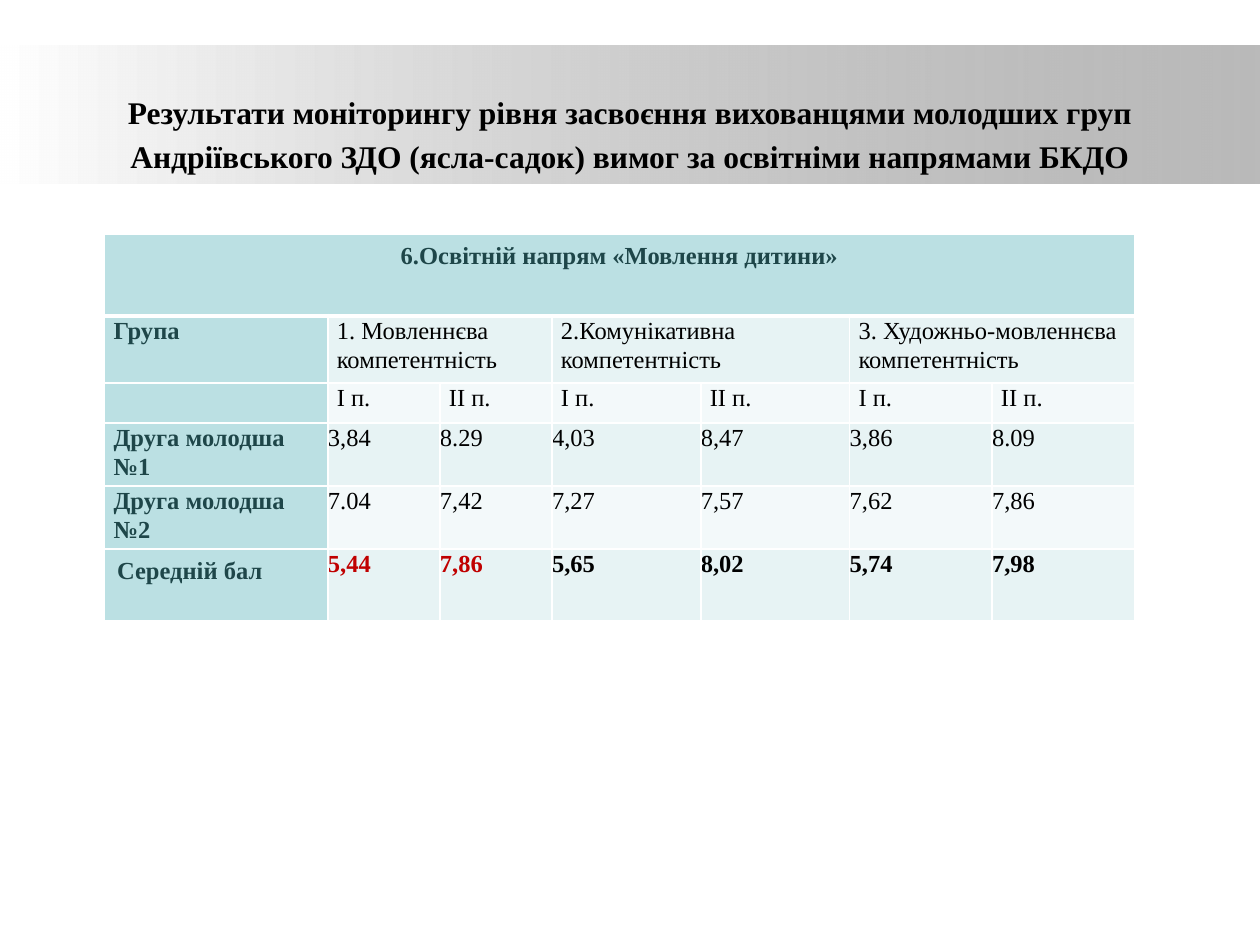
from dataclasses import dataclass

from lxml.etree import SubElement
from pptx import Presentation
from pptx.dml.color import RGBColor
from pptx.enum.shapes import MSO_SHAPE
from pptx.enum.text import MSO_ANCHOR, PP_ALIGN
from pptx.oxml.ns import qn
from pptx.util import Cm, Pt


@dataclass(frozen=True)
class Theme:
    font: str = "Times New Roman"
    title_size: int = 18
    body_size: int = 14
    white: str = "FFFFFF"
    grey: str = "808080"
    black: str = "000000"
    teal: str = "1E4649"
    red: str = "C00000"
    header: str = "BBE0E3"
    odd_row: str = "E7F3F4"
    even_row: str = "F3F9FA"


theme = Theme()


def write(tf, text, size=theme.body_size, color=theme.black, bold=False,
          align=PP_ALIGN.LEFT, spacing=1.07):
    p = tf.paragraphs[0]
    p.alignment = align
    p.line_spacing = spacing
    for i, line in enumerate(text.split("\n")):
        if i:
            p.add_line_break()
        r = p.add_run()
        r.text = line
        r.font.name = theme.font
        r.font.size = Pt(size)
        r.font.bold = bold
        r.font.color.rgb = RGBColor.from_string(color)


def style_cell(cell, fill, top=1, bottom=1):
    """Draw white borders, with widths in points, and fill the cell."""
    tc_pr = cell._tc.get_or_add_tcPr()
    for side, width in (("L", 1), ("R", 1), ("T", top), ("B", bottom)):
        ln = SubElement(tc_pr, qn(f"a:ln{side}"), w=str(Pt(width)))
        SubElement(SubElement(ln, qn("a:solidFill")), qn("a:srgbClr"), val=theme.white)
    cell.fill.solid()
    cell.fill.fore_color.rgb = RGBColor.from_string(fill)


prs = Presentation()
prs.slide_width, prs.slide_height = Cm(25.4), Cm(19.05)
s = prs.slides.add_slide(prs.slide_layouts[6])

# Title band, fading from white to translucent grey
band = s.shapes.add_shape(MSO_SHAPE.RECTANGLE, 0, Cm(0.91), prs.slide_width, Cm(2.8))
band.shadow.inherit = False
band.line.fill.background()
band.fill.gradient()
band.fill.gradient_angle = 0
for stop, position, color in zip(band.fill.gradient_stops, (0, 1), (theme.white, theme.grey)):
    stop.position = position
    stop.color.rgb = RGBColor.from_string(color)
grey_stop = band.element.findall(".//" + qn("a:gs"))[-1]
SubElement(grey_stop[0], qn("a:alpha"), val="54000")

title = s.shapes.add_textbox(Cm(1.27), Cm(0.76), Cm(22.86), Cm(3.76))
title.text_frame.word_wrap = True
title.text_frame.vertical_anchor = MSO_ANCHOR.MIDDLE
write(title.text_frame,
      "Результати моніторингу рівня засвоєння вихованцями молодших груп\n"
      "Андріївського ЗДО (ясла-садок) вимог за освітніми напрямами БКДО",
      size=theme.title_size, bold=True, align=PP_ALIGN.CENTER, spacing=1.17)

# Monitoring results
column_widths = [4.5, 2.26, 2.26, 3, 3, 2.87, 2.87]
row_heights = [1.65, 1.35, 0.81, 1.27, 1.27, 1.45]
rows = [
    ["6.Освітній напрям «Мовлення дитини»"] + [""] * 6,
    ["Група", "1. Мовленнєва компетентність", "", "2.Комунікативна компетентність", "",
     "3. Художньо-мовленнєва компетентність", ""],
    [""] + ["І п.", "ІІ п."] * 3,
    ["Друга молодша №1", "3,84", "8.29", "4,03", "8,47", "3,86", "8.09"],
    ["Друга молодша №2", "7.04", "7,42", "7,27", "7,57", "7,62", "7,86"],
    ["Середній бал", "5,44", "7,86", "5,65", "8,02", "5,74", "7,98"],
]
average_row = len(rows) - 1
first_score_row = 3

table = s.shapes.add_table(len(rows), len(column_widths), Cm(2.11), Cm(4.72),
                           Cm(sum(column_widths)), Cm(sum(row_heights))).table
table.first_row = table.horz_banding = False
for column, width in zip(table.columns, column_widths):
    column.width = Cm(width)
for row, height in zip(table.rows, row_heights):
    row.height = Cm(height)

table.cell(0, 0).merge(table.cell(0, 6))
for col in (1, 3, 5):
    table.cell(1, col).merge(table.cell(1, col + 1))

for i, texts in enumerate(rows):
    for j, text in enumerate(texts):
        cell = table.cell(i, j)
        is_header = i == 0 or j == 0
        is_score = i >= first_score_row and j > 0
        is_average = i == average_row
        band_color = theme.odd_row if i % 2 else theme.even_row
        style_cell(cell, theme.header if is_header else band_color,
                   top=3 if i == 1 else 1, bottom=3 if i == 0 else 1)

        side = 0 if is_score else 0.18
        if is_average and j == 0:
            side = 0.25
        cell.margin_left = cell.margin_right = Cm(side)
        cell.margin_top = Cm(0.13 if is_header and i in (0, average_row) else 0)
        cell.margin_bottom = 0

        color = theme.teal if is_header else theme.black
        if is_average and j in (1, 2):
            color = theme.red
        write(cell.text_frame, text, color=color, bold=is_header or is_average,
              align=PP_ALIGN.CENTER if i == 0 else PP_ALIGN.LEFT)

prs.save("out.pptx")
